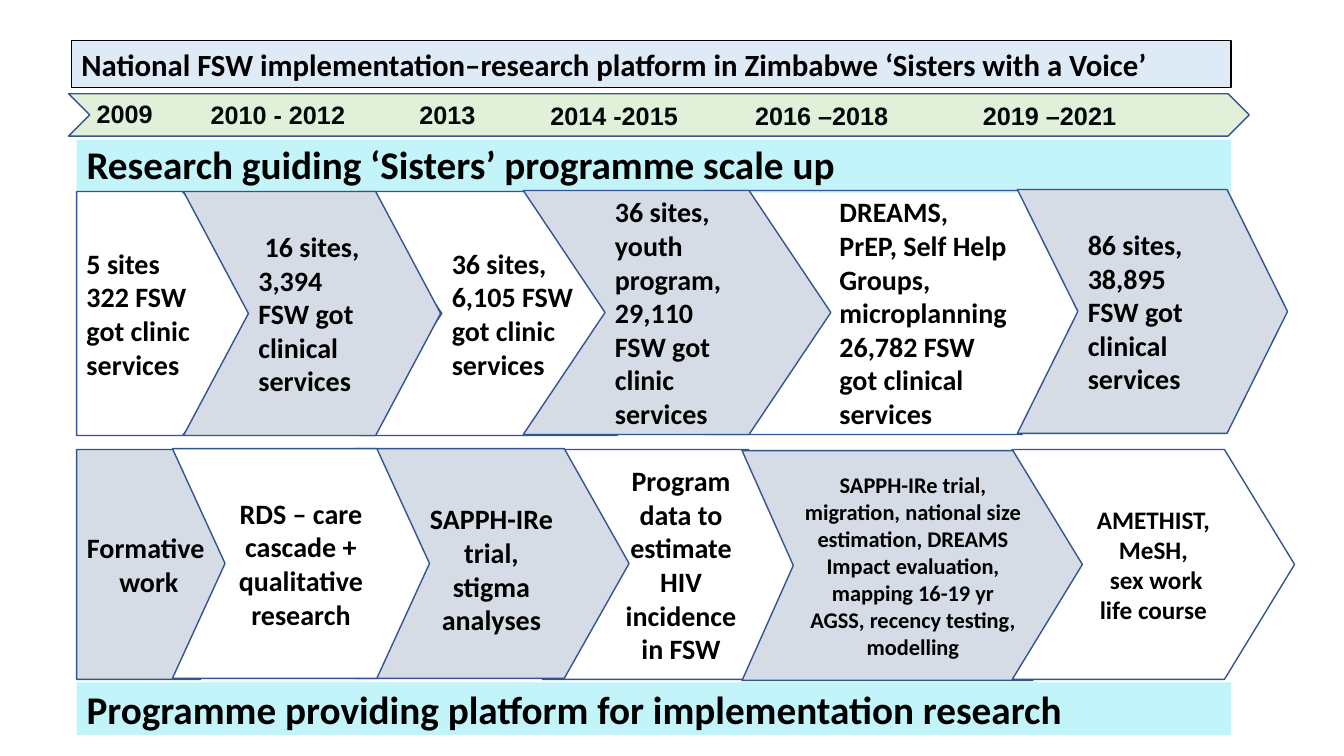
from pptx import Presentation
from pptx.dml.color import RGBColor
from pptx.enum.shapes import MSO_SHAPE
from pptx.enum.text import MSO_ANCHOR, PP_ALIGN
from pptx.util import Inches, Pt

COLORS = {"grey": "D6DCE5", "white": "FFFFFF", "aqua": "C3F4F9", "sky": "DEEBF7",
          "green": "E2F0D9", "edge": "325491", "black": "000000", "ink": "00090C"}
RECT, TAG, ARROW = MSO_SHAPE.RECTANGLE, MSO_SHAPE.PENTAGON, MSO_SHAPE.CHEVRON

BANNERS = [
    ("Research guiding ‘Sisters’ programme scale up", 1.39, 0.9),
    ("Programme providing platform for implementation research", 6.77, 1.0),
]
HEAD = "National FSW implementation–research platform in Zimbabwe ‘Sisters with a Voice’"
YEARS = [
    ("2009", 0.86, 0.93, 1.02), ("2010 - 2012", 1.99, 0.94, 1.67),
    ("2013", 4.06, 0.94, 1.02), ("2014 -2015", 5.36, 0.95, 1.57),
    ("2016 –2018", 7.39, 0.95, 1.69), ("2019 –2021", 9.65, 0.95, 1.69),
]
SITES = [
    (ARROW, 6.99, 1.89, 4.38, 0.511, None, 20,
     "DREAMS, PrEP, Self Help Groups, microplanning 26,782 FSW got clinical services"),
    (TAG, 0.76, 1.9, 2.1, 0.5, "white", 20, "5 sites\n322 FSW got clinic services"),
    (ARROW, 3.56, 1.9, 3.38, 0.34, "white", 20, "36 sites, 6,105 FSW got clinic services"),
    (ARROW, 5.19, 1.89, 3.05, 0.335, "grey", 20,
     "36 sites,\nyouth program, 29,110 FSW got clinic services"),
    (ARROW, 10.09, 1.88, 2.68, 0.248, "grey", 20, "86 sites, 38,895 FSW got clinical services"),
    (ARROW, 1.82, 1.9, 2.55, 0.266, "grey", 20, " 16 sites, 3,394 FSW got clinical services"),
]
STUDIES = [
    (TAG, 0.76, 4.46, 1.64, 0.251, "grey", 20, "Formative \nwork"),
    (ARROW, 5.38, 4.46, 2.75, 0.311, None, 20,
     "Program data to estimate HIV incidence in FSW"),
    (ARROW, 7.36, 4.47, 3.39, 0.223, "grey", 16,
     "SAPPH-IRe trial, migration, national size estimation, DREAMS Impact evaluation, "
     "mapping 16-19 yr AGSS, recency testing, modelling"),
    (ARROW, 3.51, 4.45, 2.73, 0.282, "grey", 20, "SAPPH-IRe trial, stigma analyses"),
    (ARROW, 1.71, 4.45, 2.55, 0.229, "white", 20, "RDS – care cascade + qualitative research"),
    (ARROW, 10.04, 4.46, 2.8, 0.305, "white", 18, "AMETHIST, MeSH,\n sex work life course"),
]
ROWS = [(SITES, 2.42, PP_ALIGN.LEFT), (STUDIES, 2.28, PP_ALIGN.CENTER)]


def tint(name):
    return RGBColor.from_string(COLORS[name])


def write(shape, text, size, align=PP_ALIGN.LEFT, font="Calibri", color="black", space=1.0):
    frame = shape.text_frame
    frame.word_wrap = True
    frame.vertical_anchor = MSO_ANCHOR.MIDDLE
    frame.text = text
    for para in frame.paragraphs:
        para.alignment = align
        para.line_spacing = space
        for run in para.runs:
            run.font.name = font
            run.font.size = Pt(size)
            run.font.bold = True
            run.font.color.rgb = tint(color)


def draw(slide, kind, box, fill, edge=None, width=1, adj=None):
    shape = slide.shapes.add_shape(kind, *map(Inches, box))
    shape.shadow.inherit = False
    if adj is not None:
        shape.adjustments[0] = adj
    if fill:
        shape.fill.solid()
        shape.fill.fore_color.rgb = tint(fill)
    else:
        shape.fill.background()
    if edge:
        shape.line.color.rgb = tint(edge)
        shape.line.width = Pt(width)
    else:
        shape.line.fill.background()
    return shape


def main():
    """Build the programme timeline slide."""
    deck = Presentation()
    deck.slide_width, deck.slide_height = Inches(13.33), Inches(7.5)
    slide = deck.slides.add_slide(deck.slide_layouts[6])

    for text, top, space in BANNERS:
        write(draw(slide, RECT, (0.76, top, 11.45, 0.52), "aqua"), text, 28, space=space)
    write(draw(slide, RECT, (0.71, 0.4, 11.5, 0.47), "sky", "black", 0.75), HEAD, 22)

    draw(slide, ARROW, (0.68, 0.93, 11.71, 0.42), "green", "edge")
    for text, left, top, wide in YEARS:
        label = slide.shapes.add_textbox(*map(Inches, (left, top, wide, 0.4)))
        write(label, text, 18, font="Arial", color="ink")

    for steps, high, align in ROWS:
        for kind, left, top, wide, adj, fill, size, text in steps:
            step = draw(slide, kind, (left, top, wide, high), fill, "edge", adj=adj)
            write(step, text, size, align)
            if text.endswith("analyses"):
                step.text_frame.margin_top = Inches(0.16)

    deck.save("out.pptx")


if __name__ == "__main__":
    main()
